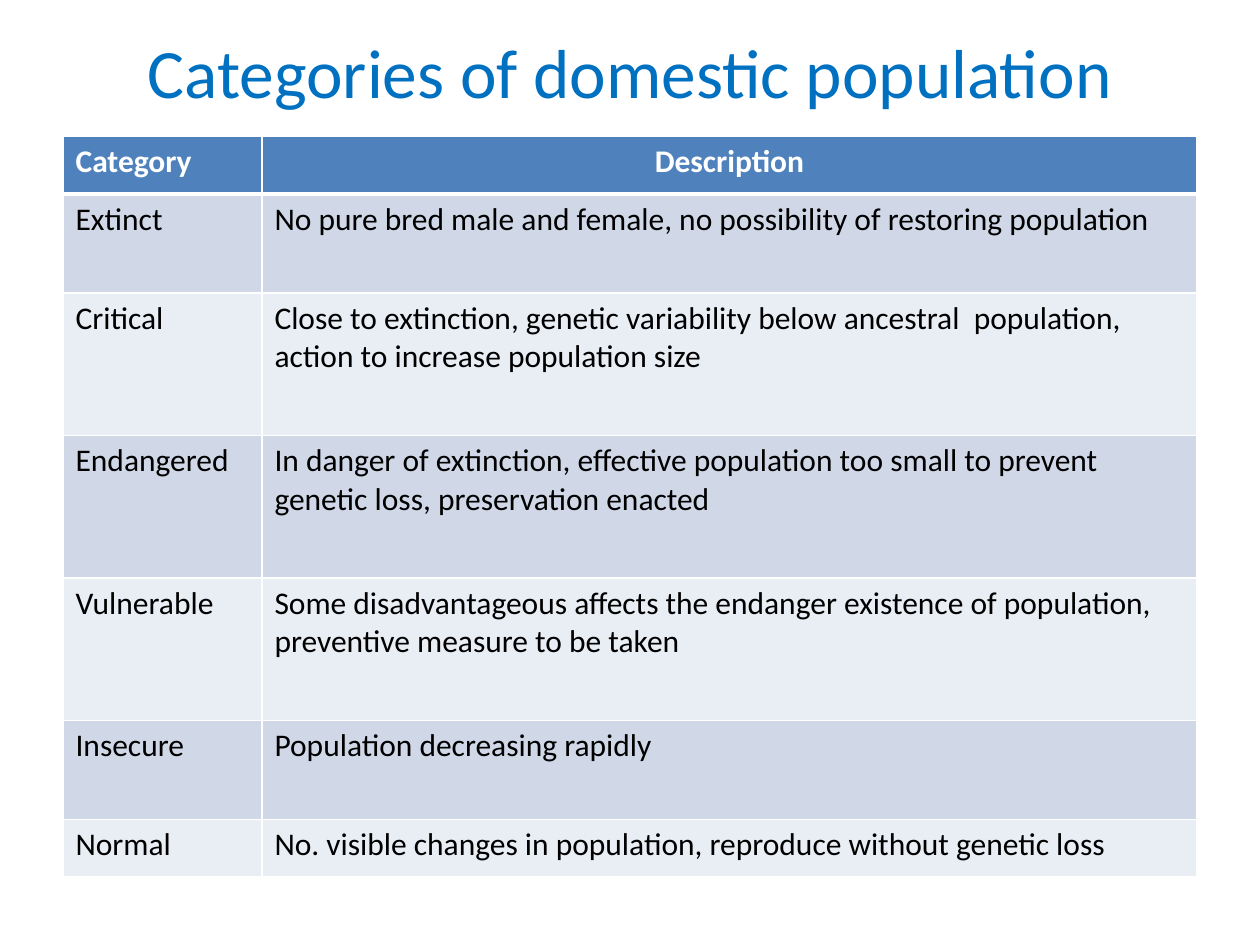
from lxml import etree
from pptx import Presentation
from pptx.dml.color import RGBColor
from pptx.enum.text import MSO_ANCHOR, PP_ALIGN
from pptx.oxml.ns import qn
from pptx.util import Cm, Pt

LEFT, CENTER = PP_ALIGN.LEFT, PP_ALIGN.CENTER
MIDDLE = MSO_ANCHOR.MIDDLE

ROWS = [
    ("Category", "Description"),
    ("Extinct", "No pure bred male and female, no possibility of restoring population"),
    ("Critical", "Close to extinction, genetic variability below ancestral  population, "
                 "action to increase population size"),
    ("Endangered", "In danger of extinction, effective population too small to prevent "
                   "genetic loss, preservation enacted"),
    ("Vulnerable", "Some disadvantageous affects the endanger existence of population, "
                   "preventive measure to be taken"),
    ("Insecure", "Population decreasing rapidly"),
    ("Normal", "No. visible changes in population, reproduce without genetic loss"),
]
COLUMN_WIDTHS = (4.01, 18.85)
ROW_HEIGHTS = (1.16, 2.0, 2.87, 2.87, 2.87, 2.0, 1.16)


def color(value):
    return RGBColor.from_string(value)


class SlideBuilder:
    font = "Calibri"
    title_color = "0070C0"
    header_fill = "4F81BD"
    band_fills = ("E9EDF4", "D0D8E8")
    white, black = "FFFFFF", "000000"

    def __init__(self, slide):
        self.slide = slide

    def add_text(self, text_frame, text, size, text_color, bold=False, align=LEFT):
        paragraph = text_frame.paragraphs[0]
        paragraph.alignment = align
        run = paragraph.add_run()
        run.text = text
        run.font.name = self.font
        run.font.size = Pt(size)
        run.font.bold = bold
        run.font.color.rgb = color(text_color)

    def title(self, text, left, top, width, height):
        shape = self.slide.shapes.add_textbox(Cm(left), Cm(top), Cm(width), Cm(height))
        shape.text_frame.word_wrap = True
        shape.text_frame.vertical_anchor = MIDDLE
        self.add_text(shape.text_frame, text, 39.6, self.title_color, align=CENTER)

    def borders(self, cell, widths):
        properties = cell._tc.get_or_add_tcPr()
        for index, (side, width) in enumerate(widths.items()):
            line = etree.Element(qn(f"a:{side}"), w=str(Pt(width)))
            fill = etree.SubElement(line, qn("a:solidFill"))
            etree.SubElement(fill, qn("a:srgbClr"), val=self.white)
            properties.insert(index, line)

    def table(self, rows, left, top, column_widths, row_heights):
        frame = self.slide.shapes.add_table(
            len(rows), len(column_widths), Cm(left), Cm(top),
            Cm(sum(column_widths)), Cm(sum(row_heights)))
        table = frame.table
        for column, width in zip(table.columns, column_widths):
            column.width = Cm(width)
        for row, height in zip(table.rows, row_heights):
            row.height = Cm(height)

        for row_index, texts in enumerate(rows):
            header = row_index == 0
            for column_index, text in enumerate(texts):
                cell = table.cell(row_index, column_index)
                cell.fill.solid()
                cell.fill.fore_color.rgb = color(
                    self.header_fill if header else self.band_fills[row_index % 2])
                # The rule under the header is thicker than the others
                self.borders(cell, {"lnL": 1, "lnR": 1,
                                    "lnT": 3 if row_index == 1 else 1,
                                    "lnB": 3 if header else 1})
                self.add_text(cell.text_frame, text, 18,
                              self.white if header else self.black, bold=header,
                              align=CENTER if header and column_index == 1 else LEFT)


def main():
    presentation = Presentation()
    presentation.slide_width, presentation.slide_height = Cm(25.4), Cm(19.05)
    builder = SlideBuilder(presentation.slides.add_slide(presentation.slide_layouts[6]))

    # Heading
    builder.title("Categories of domestic population", 1.27, 0.76, 22.86, 1.35)

    # Category table
    builder.table(ROWS, 1.27, 2.75, COLUMN_WIDTHS, ROW_HEIGHTS)

    presentation.save("out.pptx")


if __name__ == "__main__":
    main()
